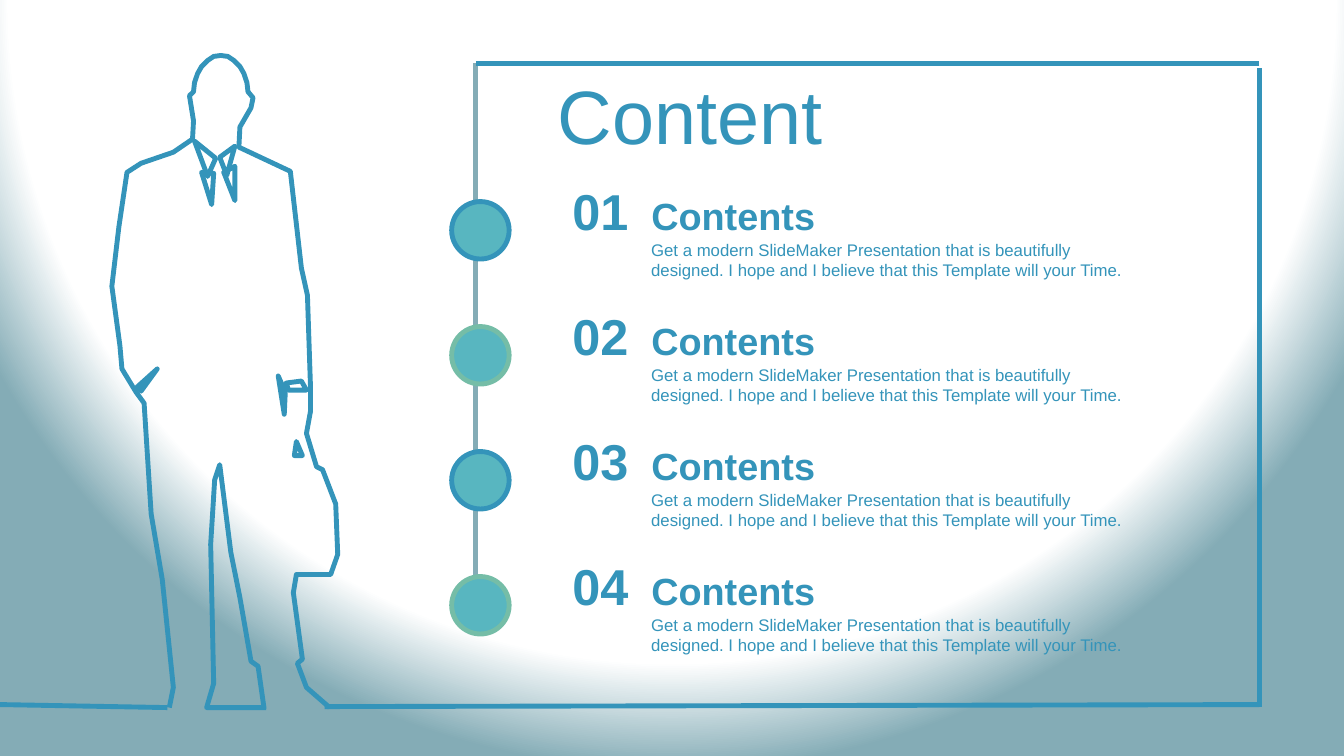
from math import cos, pi, sin

from lxml import etree
from pptx import Presentation
from pptx.dml.color import RGBColor
from pptx.enum.shapes import MSO_CONNECTOR, MSO_SHAPE
from pptx.enum.text import MSO_ANCHOR, MSO_AUTO_SIZE, PP_ALIGN
from pptx.oxml import parse_xml
from pptx.oxml.ns import qn
from pptx.util import Inches, Pt

BLUE, GREY, TEAL, GREEN = "3494BA", "84ACB6", "58B6C0", "75BDA7"
LINE_WIDTH = Pt(3.5)

TITLE = "Content"
HEADING = "Contents"
BODY = ("Get a modern SlideMaker Presentation that is beautifully designed. "
        "I hope and I believe that this Template will your Time.")
NUMBERS = ["01", "02", "03", "04"]
RINGS = [BLUE, GREEN]
FIRST_TOP, ITEM_PITCH = 1.74, 1.24

FRAME_LEFT, FRAME_TOP, FRAME_RIGHT, FLOOR = 4.72, 0.63, 12.49, 7.01
FRAME = [  # x1, y1, x2, y2, colour
    (FRAME_LEFT, 5.87, FRAME_LEFT, FRAME_TOP, GREY),
    (FRAME_RIGHT, FRAME_TOP, FRAME_LEFT, FRAME_TOP, BLUE),
    (FRAME_RIGHT, FLOOR, FRAME_RIGHT, 0.67, BLUE),
    (FRAME_RIGHT, 6.99, 3.22, FLOOR, BLUE),
    (1.66, 7.02, 0, 6.99, BLUE),
]

# Outlines of the businessman, in hundredths of an inch
HEAD_CENTER, HEAD_RADII, HEAD_STEPS = (219, 91), (27, 36), 12
LEFT_SIDE = [
    (168, 702), (172, 682), (161, 575), (150, 510), (143, 400), (135, 389),
    (121, 366), (119, 343), (111, 284), (118, 225), (126, 171), (140, 162),
    (172, 151), (191, 138), (192, 120), (188, 95),
]
RIGHT_SIDE = [
    (251, 97), (249, 107), (238, 126), (237, 146), (288, 170), (299, 266),
    (305, 293), (308, 384), (308, 408), (304, 430), (314, 463), (320, 466),
    (333, 500), (335, 550), (328, 570), (294, 570), (291, 588), (300, 654),
    (295, 658), (304, 682), (327, 702),
]
INNER_LEG = [
    (262, 703), (256, 661), (249, 656), (238, 593), (229, 548), (218, 461),
    (213, 476), (209, 540), (212, 678), (205, 702), (264, 702),
]
DETAILS = {
    "briefcase handle": [(300, 452), (294, 438), (292, 452)],
    "right cuff": [(286, 387), (304, 387), (299, 378), (284, 380)],
    "right pocket": [(282, 411), (283, 389), (276, 373)],
    "right tie": [(233, 199), (233, 165), (222, 171)],
    "right collar": [(225, 174), (233, 145), (218, 156)],
    "left tie": [(210, 203), (212, 172), (200, 171)],
    "left collar": [(206, 175), (214, 157), (193, 140)],
    "left pocket": [(140, 388), (156, 366), (136, 384)],
}

BACKGROUND = f"""
<p:bg xmlns:p="http://schemas.openxmlformats.org/presentationml/2006/main"
      xmlns:a="http://schemas.openxmlformats.org/drawingml/2006/main">
  <p:bgPr><a:gradFill rotWithShape="1"><a:gsLst>
    <a:gs pos="0"><a:srgbClr val="FFFFFF"/></a:gs>
    <a:gs pos="86000"><a:srgbClr val="FFFFFF"/></a:gs>
    <a:gs pos="100000"><a:srgbClr val="{GREY}"/></a:gs>
  </a:gsLst><a:path path="circle">
    <a:fillToRect l="50000" t="-80000" r="50000" b="180000"/>
  </a:path></a:gradFill><a:effectLst/></p:bgPr>
</p:bg>"""


def rgb(value):
    return RGBColor.from_string(value)


def set_line(shape, color):
    shape.line.color.rgb = rgb(color)
    shape.line.width = LINE_WIDTH


def place(shape, *box):
    shape.left, shape.top, shape.width, shape.height = map(Inches, box)


def write(shape, text, size, bold=False, align=PP_ALIGN.LEFT,
          anchor=MSO_ANCHOR.TOP, side_inset=0.1):
    tf = shape.text_frame
    tf.word_wrap = True
    tf.auto_size = MSO_AUTO_SIZE.SHAPE_TO_FIT_TEXT
    tf.vertical_anchor = anchor
    tf.margin_left = tf.margin_right = Inches(side_inset)
    tf.margin_top = tf.margin_bottom = Inches(0.05)
    tf.text = text
    p = tf.paragraphs[0]
    p.alignment = align
    p.font.name, p.font.size, p.font.bold = "Arial", Pt(size), bold
    p.font.color.rgb = rgb(BLUE)


def add_text(s, box, *args, **kwargs):
    write(s.shapes.add_textbox(*map(Inches, box)), *args, **kwargs)


def add_frame(s):
    for *ends, color in FRAME:
        line = s.shapes.add_connector(MSO_CONNECTOR.STRAIGHT,
                                      *map(Inches, ends))
        set_line(line, color)
        etree.SubElement(line._element.spPr, qn("a:effectLst"))


def add_item(s, top, number, ring):
    dot = s.shapes.add_shape(MSO_SHAPE.OVAL, Inches(4.48), Inches(top + 0.26),
                             Inches(0.57), Inches(0.57))
    dot.shadow.inherit = False
    dot.fill.solid()
    dot.fill.fore_color.rgb = rgb(TEAL)
    set_line(dot, ring)
    add_text(s, (6.36, top + 0.59, 4.93, 0.5), BODY, 12)
    add_text(s, (6.34, top + 0.12, 4.93, 0.56), HEADING, 27, bold=True,
             side_inset=0.12)
    add_text(s, (5.43, top, 1.05, 0.71), number, 36, bold=True,
             align=PP_ALIGN.CENTER, side_inset=0.12)


def head_arc():
    """Points over the top of the head, from left to right."""
    (x, y), (rx, ry) = HEAD_CENTER, HEAD_RADII
    angles = [pi * i / HEAD_STEPS for i in range(HEAD_STEPS + 1)]
    return [(x - rx * cos(a), y - ry * sin(a)) for a in angles]


def add_businessman(s):
    outlines = [(INNER_LEG, False),
                (LEFT_SIDE + head_arc() + RIGHT_SIDE, False)]
    outlines += [(points, True) for points in DETAILS.values()]
    builder = s.shapes.build_freeform(*INNER_LEG[0], scale=Inches(0.01))
    for points, closed in outlines:
        builder.move_to(*points[0])
        builder.add_line_segments(points[1:], close=closed)
    man = builder.convert_to_shape()
    man.shadow.inherit = False
    man.fill.background()
    set_line(man, BLUE)


def main():
    prs = Presentation()
    prs.slide_width, prs.slide_height = Inches(13.33), Inches(7.5)
    s = prs.slides.add_slide(prs.slide_layouts[5])
    s._element.cSld.insert(0, parse_xml(BACKGROUND))
    add_frame(s)
    for i, number in enumerate(NUMBERS):
        add_item(s, FIRST_TOP + i * ITEM_PITCH, number, RINGS[i % len(RINGS)])
    add_businessman(s)
    place(s.shapes.title, 5.43, 0.63, 6.79, 1.01)
    write(s.shapes.title, TITLE, 54, anchor=MSO_ANCHOR.MIDDLE)
    prs.save("out.pptx")


if __name__ == "__main__":
    main()
